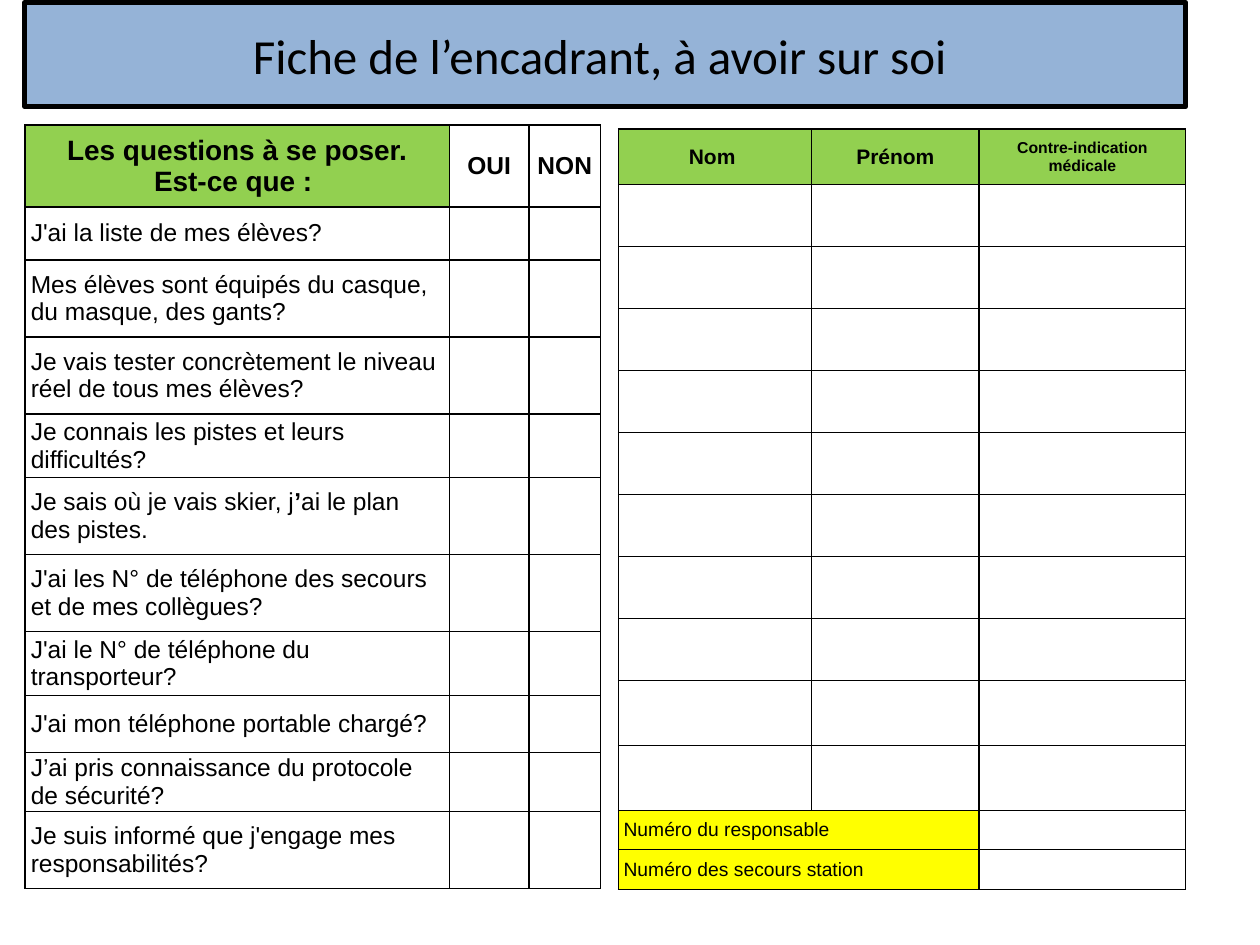
from lxml import etree
from pptx import Presentation
from pptx import util as u
from pptx.dml.color import RGBColor
from pptx.enum import text
from pptx.oxml import ns

COLORS = {
    "black": "000000",
    "title": "95B3D7",
    "header": "92D050",
    "number": "FFFF00",
}
QUESTIONS = [
    "J'ai la liste de mes élèves?",
    "Mes élèves sont équipés du casque, du masque, des gants?",
    "Je vais tester concrètement le niveau réel de tous mes élèves?",
    "Je connais les pistes et leurs difficultés?",
    "Je sais où je vais skier, j*’*ai le plan des pistes.",
    "J'ai les N° de téléphone des secours et de mes collègues?",
    "J'ai le N° de téléphone du transporteur?",
    "J'ai mon téléphone portable chargé?",
    "J’ai pris connaissance du protocole de sécurité?",
    "Je suis informé que j'engage mes responsabilités?",
]
NUMBERS = ["Numéro du responsable", "Numéro des secours station"]
QUESTION_ROWS = [1.65, 1.07, 1.55, 1.56, 1.28, 1.55, 1.55, 1.29, 1.15, 1.19, 1.55]
STUDENT_ROWS = [1.12] + [1.25] * 8 + [1.31] * 2 + [0.78, 0.81]


def color(name):
    return RGBColor.from_string(COLORS[name])


def add_title(s, content):
    sp = s.shapes.title
    sp.left, sp.top, sp.width, sp.height = u.Cm(0.5), u.Cm(0.05), u.Cm(23.4), u.Cm(2.1)
    sp.fill.solid()
    sp.fill.fore_color.rgb = color("title")
    sp.line.color.rgb = color("black")
    sp.line.width = u.Pt(3)
    tf = sp.text_frame
    tf.auto_size = text.MSO_AUTO_SIZE.NONE
    tf.vertical_anchor = text.MSO_ANCHOR.MIDDLE
    tf.text = content
    p = tf.paragraphs[0]
    p.alignment = text.PP_ALIGN.CENTER
    p.font.name, p.font.size = "Calibri", u.Pt(28)
    p.font.color.rgb = color("black")


def add_borders(cell):
    tc_pr = cell._tc.get_or_add_tcPr()
    for i, side in enumerate(("lnL", "lnR", "lnT", "lnB")):
        ln = etree.Element(ns.qn(f"a:{side}"), w=str(u.Pt(1)))
        fill = etree.SubElement(ln, ns.qn("a:solidFill"))
        etree.SubElement(fill, ns.qn("a:srgbClr"), val=COLORS["black"])
        tc_pr.insert(i, ln)


def add_grid(s, left, top, widths, heights, inset):
    frame = s.shapes.add_table(len(heights), len(widths), u.Cm(left), u.Cm(top),
                               u.Cm(sum(widths)), u.Cm(sum(heights)))
    table = frame.table
    table.first_row = table.horz_banding = False
    for column, width in zip(table.columns, widths):
        column.width = u.Cm(width)
    for row, height in zip(table.rows, heights):
        row.height = u.Cm(height)
        for cell in row.cells:
            cell.fill.background()
            cell.margin_left = cell.margin_right = u.Cm(inset)
            cell.margin_top = cell.margin_bottom = 0
            cell.vertical_anchor = text.MSO_ANCHOR.MIDDLE
            cell.text_frame.paragraphs[0].font.size = u.Pt(11)
            add_borders(cell)
    return table


def write(cell, content, size, header=False, fill=None):
    if fill:
        cell.fill.solid()
        cell.fill.fore_color.rgb = color(fill)
    tf = cell.text_frame
    for i, line in enumerate(content.split("\n")):
        p = tf.add_paragraph() if i else tf.paragraphs[0]
        p.alignment = text.PP_ALIGN.CENTER if header else text.PP_ALIGN.LEFT
        p.font.name, p.font.size, p.font.bold = "Arial", u.Pt(size), header
        p.font.color.rgb = color("black")
        for j, part in enumerate(line.split("*")):
            r = p.add_run()
            r.text = part
            if j % 2:
                r.font.bold = True


def add_questions(s):
    table = add_grid(s, 0.5, 2.52, [8.56, 1.6, 1.45], QUESTION_ROWS, 0.12)
    write(table.cell(0, 0), "Les questions à se poser.\nEst-ce que : ", 16, True, "header")
    for col, answer in enumerate(["OUI", "NON"], 1):
        write(table.cell(0, col), answer, 14, True)
    for row, question in enumerate(QUESTIONS, 1):
        write(table.cell(row, 0), question, 14)


def add_students(s):
    table = add_grid(s, 12.47, 2.6, [3.89, 3.38, 4.16], STUDENT_ROWS, 0.1)
    headers = [("Nom ", 12), ("Prénom", 12), ("Contre-indication médicale", 9)]
    for col, (label, size) in enumerate(headers):
        write(table.cell(0, col), label, size, True, "header")
    for row, label in enumerate(NUMBERS, len(STUDENT_ROWS) - len(NUMBERS)):
        table.cell(row, 0).merge(table.cell(row, 1))
        write(table.cell(row, 0), label, 11, fill="number")


def main():
    prs = Presentation()
    prs.slide_width, prs.slide_height = u.Cm(25.4), u.Cm(19.05)
    s = prs.slides.add_slide(prs.slide_layouts[5])
    add_title(s, "Fiche de l’encadrant, à avoir sur soi ")
    add_questions(s)
    add_students(s)
    prs.save("out.pptx")


if __name__ == "__main__":
    main()
